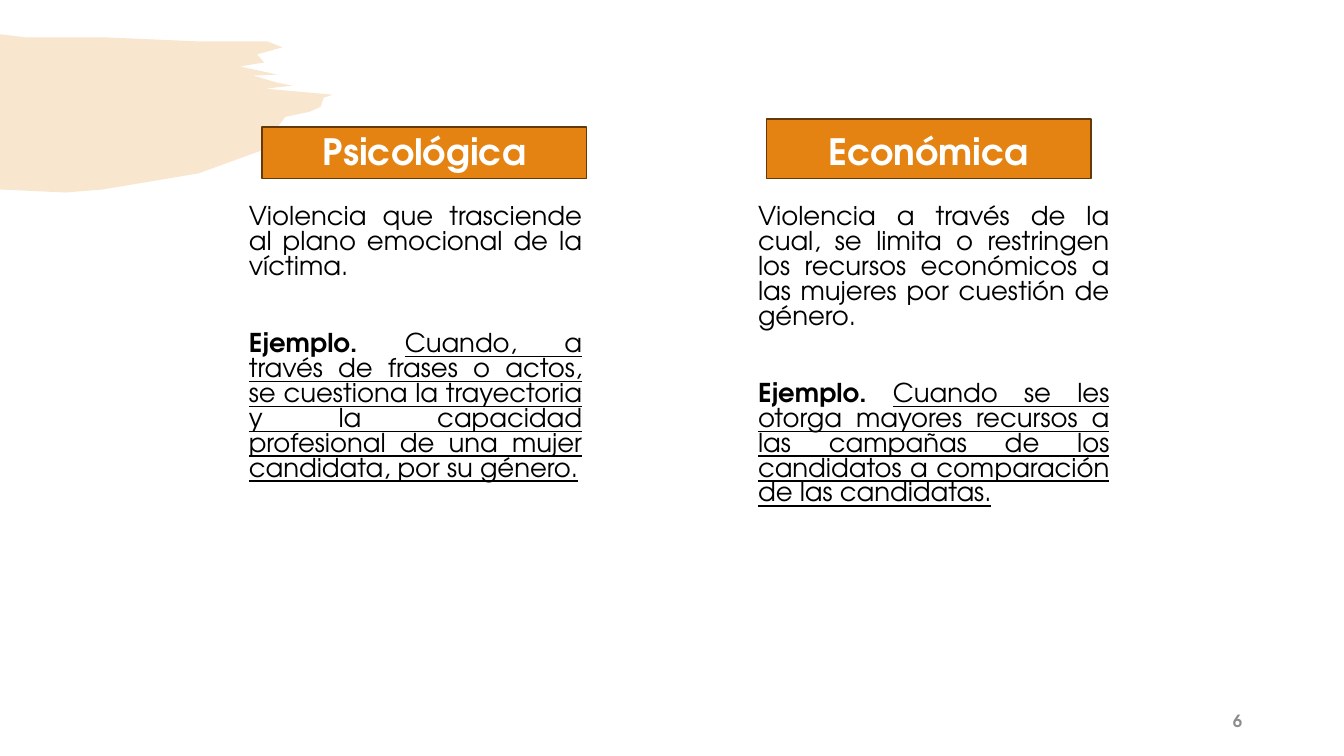
"""Build a slide that defines psychological and economic violence, with examples."""
from dataclasses import dataclass

from lxml.etree import SubElement
from pptx import Presentation
from pptx.dml.color import RGBColor
from pptx.enum.shapes import MSO_SHAPE
from pptx.enum.text import MSO_ANCHOR, PP_ALIGN
from pptx.oxml.ns import qn
from pptx.slide import Slide
from pptx.text.text import _Paragraph
from pptx.util import Inches, Pt


@dataclass(frozen=True)
class Theme:
    font: str = "TeX Gyre Adventor"
    accent: RGBColor = RGBColor.from_string("E48312")
    accent_dark: RGBColor = RGBColor.from_string("643908")
    on_accent: RGBColor = RGBColor.from_string("FFFFFF")
    body: RGBColor = RGBColor.from_string("000000")
    muted: RGBColor = RGBColor.from_string("8C8C8C")
    heading_size: float = 25.9
    body_size: float = 18.5
    number_size: float = 12
    brush_opacity: int = 20


@dataclass(frozen=True)
class Box:
    left: float
    top: float
    width: float
    height: float

    def emu(self) -> tuple[int, ...]:
        """Return the position and size as lengths."""
        return tuple(Inches(n) for n in (self.left, self.top, self.width, self.height))


@dataclass(frozen=True)
class Violence:
    heading: str
    definition: str
    example: str
    heading_box: Box
    body_box: Box


THEME = Theme()

VIOLENCES = (
    Violence(
        "Psicológica",
        "Violencia que trasciende al plano emocional de la víctima.",
        "Cuando, a través de frases o actos, se cuestiona la trayectoria y la "
        "capacidad profesional de una mujer candidata, por su género.",
        Box(2.6, 1.26, 3.22, 0.51),
        Box(2.37, 1.99, 3.5, 4.57),
    ),
    Violence(
        "Económica",
        "Violencia a través de la cual, se limita o restringen los recursos "
        "económicos a las mujeres por cuestión de género.",
        "Cuando se les otorga mayores recursos a las campañas de los candidatos "
        "a comparación de las candidatas.",
        Box(7.6, 1.18, 3.22, 0.59),
        Box(7.42, 1.99, 3.68, 3.68),
    ),
)
NUMBER_BOX = Box(9.42, 6.95, 3, 0.4)

BRUSH_OUTLINE = (
    (0, 0.34), (0.25, 0.37), (1.02, 0.37), (1.94, 0.41), (2.65, 0.41),
    (2.8, 0.47), (2.55, 0.54), (2.62, 0.62), (2.38, 0.66), (2.75, 0.74),
    (2.51, 0.75), (2.75, 0.82), (2.9, 0.85), (2.63, 0.88), (3.3, 0.94),
    (3.21, 0.97), (3.18, 1.06), (3.07, 1.11), (2.83, 1.16), (2.74, 1.28),
    (3.08, 1.28), (2.69, 1.38), (2.63, 1.48), (1.97, 1.72), (1.02, 1.88),
    (0.65, 1.91), (0, 1.88),
)


def draw_brush(slide: Slide) -> None:
    """Draw the translucent brush stroke in the corner."""
    start, *rest = [(Inches(x), Inches(y)) for x, y in BRUSH_OUTLINE]
    outline = slide.shapes.build_freeform(*start)
    outline.add_line_segments(rest, close=True)
    brush = outline.convert_to_shape()
    brush.shadow.inherit = False
    brush.line.fill.background()
    brush.fill.solid()
    brush.fill.fore_color.rgb = THEME.accent
    tint = brush.element.spPr.find(qn("a:solidFill"))[0]
    SubElement(tint, qn("a:alpha"), val=str(THEME.brush_opacity * 1000))


def format_paragraph(paragraph: _Paragraph, align: PP_ALIGN, spacing: float, before: float) -> None:
    """Set the alignment and spacing of a paragraph."""
    paragraph.alignment = align
    paragraph.line_spacing = spacing
    paragraph.space_before = Pt(before)


def add_run(paragraph: _Paragraph, text: str, size: float, color: RGBColor,
            bold: bool = False, underline: bool = False) -> None:
    """Add one styled run of text."""
    run = paragraph.add_run()
    run.text = text
    run.font.name = THEME.font
    run.font.size = Pt(size)
    run.font.color.rgb = color
    run.font.bold = bold
    run.font.underline = underline


def draw_heading(slide: Slide, violence: Violence) -> None:
    """Draw the filled heading of one kind of violence."""
    heading = slide.shapes.add_shape(MSO_SHAPE.RECTANGLE, *violence.heading_box.emu())
    heading.shadow.inherit = False
    heading.fill.solid()
    heading.fill.fore_color.rgb = THEME.accent
    heading.line.color.rgb = THEME.accent_dark
    heading.line.width = Pt(1)
    heading.text_frame.word_wrap = True
    heading.text_frame.vertical_anchor = MSO_ANCHOR.BOTTOM
    title = heading.text_frame.paragraphs[0]
    format_paragraph(title, PP_ALIGN.CENTER, 0.9, 10)
    add_run(title, violence.heading, THEME.heading_size, THEME.on_accent, bold=True)


def draw_body(slide: Slide, violence: Violence) -> None:
    """Write the definition and the example of one kind of violence."""
    frame = slide.shapes.add_textbox(*violence.body_box.emu()).text_frame
    frame.word_wrap = True
    definition = frame.paragraphs[0]
    format_paragraph(definition, PP_ALIGN.JUSTIFY, 0.8, 10)
    add_run(definition, violence.definition, THEME.body_size, THEME.body)
    example = frame.add_paragraph()
    format_paragraph(example, PP_ALIGN.JUSTIFY, 0.8, 37.5)
    add_run(example, "Ejemplo. ", THEME.body_size, THEME.body, bold=True)
    add_run(example, violence.example, THEME.body_size, THEME.body, underline=True)


def draw_number(slide: Slide, number: str) -> None:
    """Write the slide number."""
    frame = slide.shapes.add_textbox(*NUMBER_BOX.emu()).text_frame
    frame.word_wrap = True
    frame.vertical_anchor = MSO_ANCHOR.MIDDLE
    paragraph = frame.paragraphs[0]
    paragraph.alignment = PP_ALIGN.RIGHT
    add_run(paragraph, number, THEME.number_size, THEME.muted, bold=True)


def main() -> None:
    """Build and save the presentation."""
    deck = Presentation()
    deck.slide_width, deck.slide_height = Inches(13.33), Inches(7.5)
    slide = deck.slides.add_slide(deck.slide_layouts[6])
    draw_brush(slide)
    for violence in VIOLENCES:
        draw_heading(slide, violence)
        draw_body(slide, violence)
    draw_number(slide, "6")
    deck.save("out.pptx")


if __name__ == "__main__":
    main()
